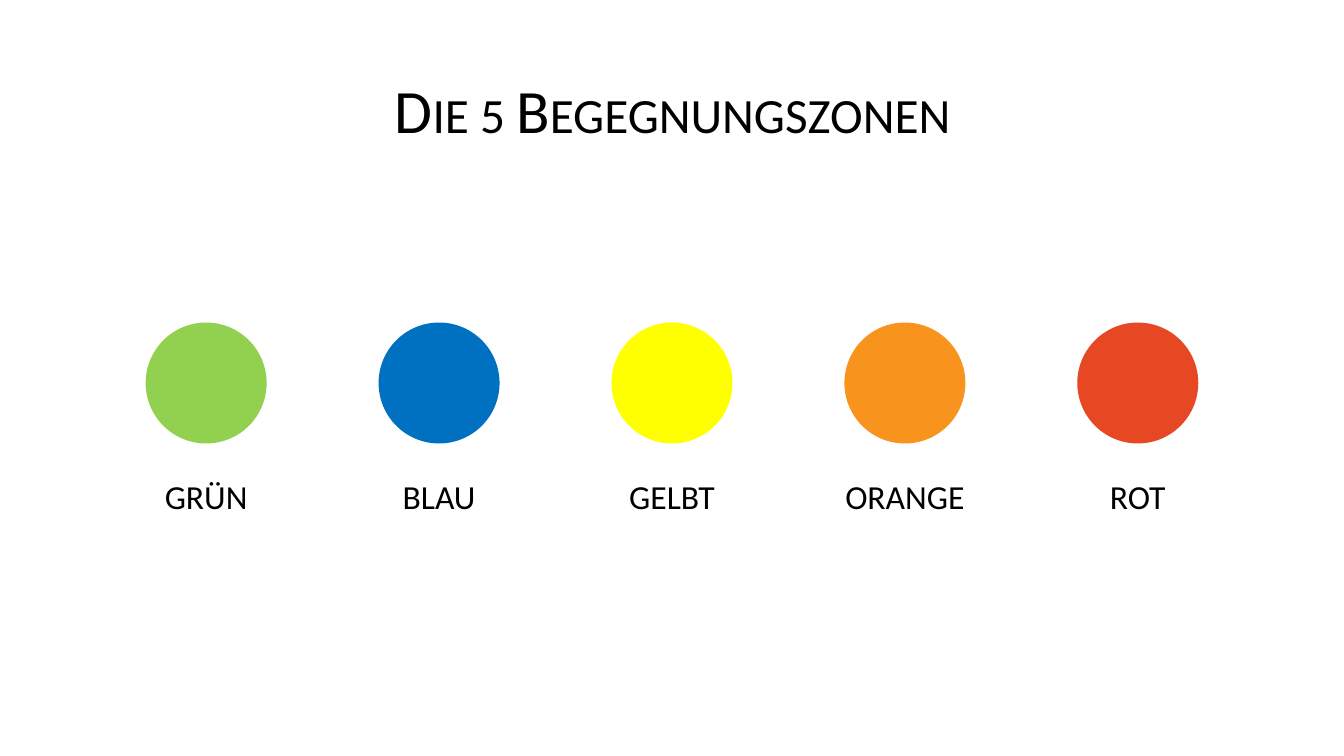
from pptx import Presentation
from pptx.dml.color import RGBColor
from pptx.enum.shapes import MSO_SHAPE
from pptx.enum.text import MSO_ANCHOR, PP_ALIGN
from pptx.util import Inches, Pt

OVAL = MSO_SHAPE.OVAL
CENTER = PP_ALIGN.CENTER
MIDDLE, TOP = MSO_ANCHOR.MIDDLE, MSO_ANCHOR.TOP

BLACK = RGBColor(0x00, 0x00, 0x00)
GREEN = RGBColor(0x92, 0xD0, 0x50)
BLUE = RGBColor(0x00, 0x70, 0xC0)
YELLOW = RGBColor(0xFF, 0xFF, 0x00)
ORANGE = RGBColor(0xF8, 0x93, 0x1D)
RED = RGBColor(0xE6, 0x48, 0x23)

# Content
TITLE = "Die 5 Begegnungszonen"
ZONES = [
    ("GRÜN", GREEN),
    ("BLAU", BLUE),
    ("GELBT", YELLOW),
    ("ORANGE", ORANGE),
    ("ROT", RED),
]

# Layout in inches
SLIDE_W, SLIDE_H = 13.33, 7.5
PITCH = 2.31
CIRCLE_TOP, CIRCLE_SIZE = 3.2, 1.2
LABEL_TOP, LABEL_W, LABEL_H = 4.77, 1.97, 0.79


def set_text(tf, text, size, anchor):
    tf.text = text
    tf.word_wrap = True
    tf.vertical_anchor = anchor
    p = tf.paragraphs[0]
    p.alignment = CENTER
    p.line_spacing = 0.9
    font = p.runs[0].font
    font.name = "Calibri"
    font.size = Pt(size)
    font.color.rgb = BLACK
    return p.runs[0]


prs = Presentation()
prs.slide_width, prs.slide_height = Inches(SLIDE_W), Inches(SLIDE_H)
s = prs.slides.add_slide(prs.slide_layouts[5])

# Title in small capitals
title = s.shapes.title
title.left, title.top = Inches(0.92), Inches(0.4)
title.width, title.height = Inches(11.5), Inches(1.45)
r = set_text(title.text_frame, TITLE, 44, MIDDLE)
r._r.get_or_add_rPr().set("cap", "small")

# Row of zones, centred on the slide
for i, (name, color) in enumerate(ZONES):
    center = SLIDE_W / 2 + (i - (len(ZONES) - 1) / 2) * PITCH

    circle = s.shapes.add_shape(
        OVAL, Inches(center - CIRCLE_SIZE / 2), Inches(CIRCLE_TOP),
        Inches(CIRCLE_SIZE), Inches(CIRCLE_SIZE))
    circle.shadow.inherit = False
    circle.fill.solid()
    circle.fill.fore_color.rgb = color
    circle.line.fill.background()

    label = s.shapes.add_textbox(
        Inches(center - LABEL_W / 2), Inches(LABEL_TOP),
        Inches(LABEL_W), Inches(LABEL_H))
    tf = label.text_frame
    tf.margin_left = tf.margin_right = tf.margin_top = tf.margin_bottom = 0
    set_text(tf, name, 24, TOP)

prs.save("out.pptx")
